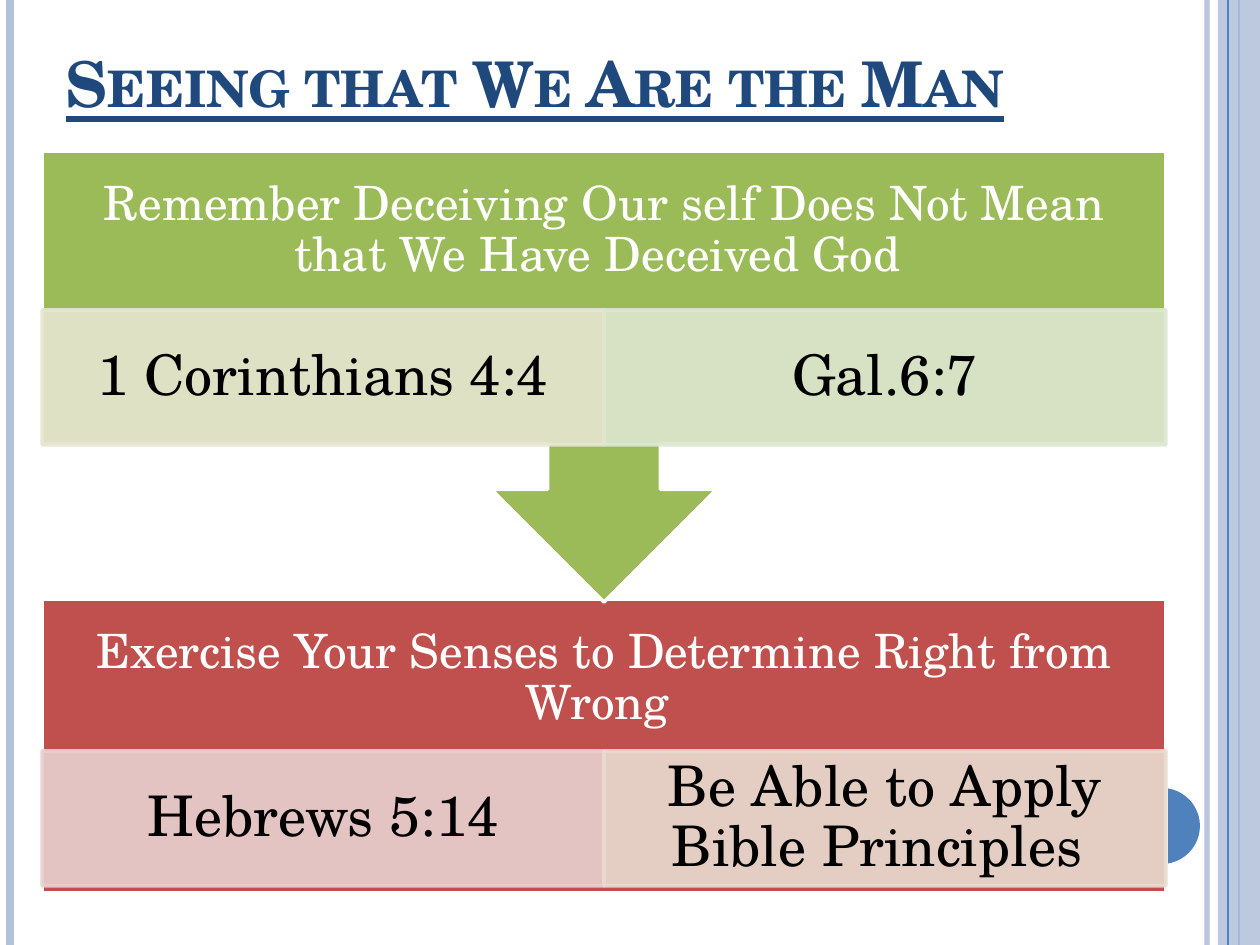
from lxml import etree
from pptx import Presentation
from pptx.dml.color import RGBColor
from pptx.enum.shapes import MSO_CONNECTOR, MSO_SHAPE
from pptx.enum.text import MSO_ANCHOR, PP_ALIGN
from pptx.oxml.ns import qn
from pptx.util import Pt

RECT, ELLIPSE, CALLOUT = MSO_SHAPE.RECTANGLE, MSO_SHAPE.OVAL, MSO_SHAPE.UP_ARROW_CALLOUT
STRAIGHT = MSO_CONNECTOR.STRAIGHT
MIDDLE, BOTTOM = MSO_ANCHOR.MIDDLE, MSO_ANCHOR.BOTTOM
LEFT, CENTER = PP_ALIGN.LEFT, PP_ALIGN.CENTER

PX = 914400 / 126
FONT = "TeX Gyre Schola"
WHITE = RGBColor(0xFF, 0xFF, 0xFF)
BLACK = RGBColor(0x00, 0x00, 0x00)
NAVY = RGBColor(0x1F, 0x49, 0x7D)
BLUE = RGBColor(0x4F, 0x81, 0xBD)
PALE_BLUE = RGBColor(0xB3, 0xC1, 0xDB)
GREEN = RGBColor(0x9B, 0xBB, 0x59)
RED = RGBColor(0xC0, 0x50, 0x4D)
PALE_OLIVE = RGBColor(0xE7, 0xE6, 0xD1)
PALE_GREEN = RGBColor(0xDE, 0xE7, 0xD1)
PALE_PINK = RGBColor(0xE8, 0xD0, 0xD0)
PALE_PEACH = RGBColor(0xE8, 0xDC, 0xD0)

SLIDE_W, SLIDE_H = 1260, 945
TITLE = "Seeing that We Are the Man"
TITLE_BOX = (53, -32, 1029, 158)
RULES = [(1207, PALE_BLUE, 3, 93), (10, PALE_BLUE, 4.5, 100), (1239, BLUE, 1.5, 100)]
BAND_RULE = (1228, BLUE, 0.75, 100)
BAND_BOX = (1218, 0, 42, SLIDE_H)
DOT_BOX = (1124, 788, 76, 76)

BLOCK_X, BLOCK_W = 42, 1124
HEADER_H, CELL_H = 159, 135
STEPS = [
    {"shape": RECT, "rotation": 0, "top": 599, "height": 294, "cell_top": 751, "color": RED,
     "header": "Exercise Your Senses to Determine Right from Wrong ",
     "cells": [("Hebrews 5:14", PALE_PINK), ("Be Able to Apply Bible Principles ", PALE_PEACH)]},
    {"shape": CALLOUT, "rotation": 180, "top": 151, "height": 451, "cell_top": 310, "color": GREEN,
     "header": "Remember Deceiving Our self Does Not Mean that We Have Deceived God ",
     "cells": [("1 Corinthians 4:4", PALE_OLIVE), ("Gal.6:7", PALE_GREEN)]},
]


def emu(*lengths):
    return [round(n * PX) for n in lengths]


def set_opacity(s, percent):
    if percent < 100:
        for color in s._element.spPr.iter(qn("a:srgbClr")):
            etree.SubElement(color, qn("a:alpha"), val=str(percent * 1000))


def add_rule(shapes, x, color, width, opacity):
    s = shapes.add_connector(STRAIGHT, *emu(x, 0, x, SLIDE_H))
    s.line.color.rgb = color
    s.line.width = Pt(width)
    set_opacity(s, opacity)
    etree.SubElement(s._element.spPr, qn("a:effectLst"))


def add_block(shapes, kind, box, fill, line=None, opacity=100):
    s = shapes.add_shape(kind, *emu(*box))
    s.shadow.inherit = False
    s.fill.solid()
    s.fill.fore_color.rgb = fill
    if line is None:
        s.line.fill.background()
    else:
        s.line.color.rgb = line
        s.line.width = Pt(2)
    set_opacity(s, opacity)
    return s


def write(s, text, size, color, inset_x, inset_y, align=CENTER, anchor=MIDDLE, spacing=0.9):
    tf = s.text_frame
    tf.text = text
    tf.word_wrap = True
    tf.vertical_anchor = anchor
    tf.margin_left, tf.margin_right, tf.margin_top, tf.margin_bottom = emu(
        inset_x, inset_x, inset_y, inset_y)
    p = tf.paragraphs[0]
    p.alignment = align
    p.line_spacing = spacing
    r = p.runs[0]
    r.font.name = FONT
    r.font.size = Pt(size)
    r.font.color.rgb = color
    return r


def add_step(shapes, step):
    s = add_block(shapes, step["shape"], (BLOCK_X, step["top"], BLOCK_W, step["height"]),
                  step["color"], WHITE)
    s.rotation = step["rotation"]
    header = shapes.add_textbox(*emu(BLOCK_X, step["top"], BLOCK_W, HEADER_H))
    write(header, step["header"], 27, WHITE, 27, 27)
    cell_w = BLOCK_W // len(step["cells"])
    for i, (text, color) in enumerate(step["cells"]):
        box = (BLOCK_X + i * cell_w, step["cell_top"], cell_w, CELL_H)
        cell = add_block(shapes, RECT, box, color, color, 90)
        write(cell, text, 32, BLACK, 32, 5)


def main():
    """Build the slide and save it."""
    prs = Presentation()
    prs.slide_width, prs.slide_height = emu(SLIDE_W, SLIDE_H)
    slide = prs.slides.add_slide(prs.slide_layouts[5])
    shapes = slide.shapes

    title = shapes.title
    title.left, title.top, title.width, title.height = emu(*TITLE_BOX)
    r = write(title, TITLE, 36, NAVY, 13, 6, LEFT, BOTTOM, 1.0)
    r.font.bold = True
    r.font.underline = True
    r.font._element.set("cap", "small")

    for rule in RULES:
        add_rule(shapes, *rule)
    add_block(shapes, RECT, BAND_BOX, PALE_BLUE, opacity=87)
    add_rule(shapes, *BAND_RULE)
    add_block(shapes, ELLIPSE, DOT_BOX, BLUE)
    for step in STEPS:
        add_step(shapes, step)
    prs.save("out.pptx")


if __name__ == "__main__":
    main()
